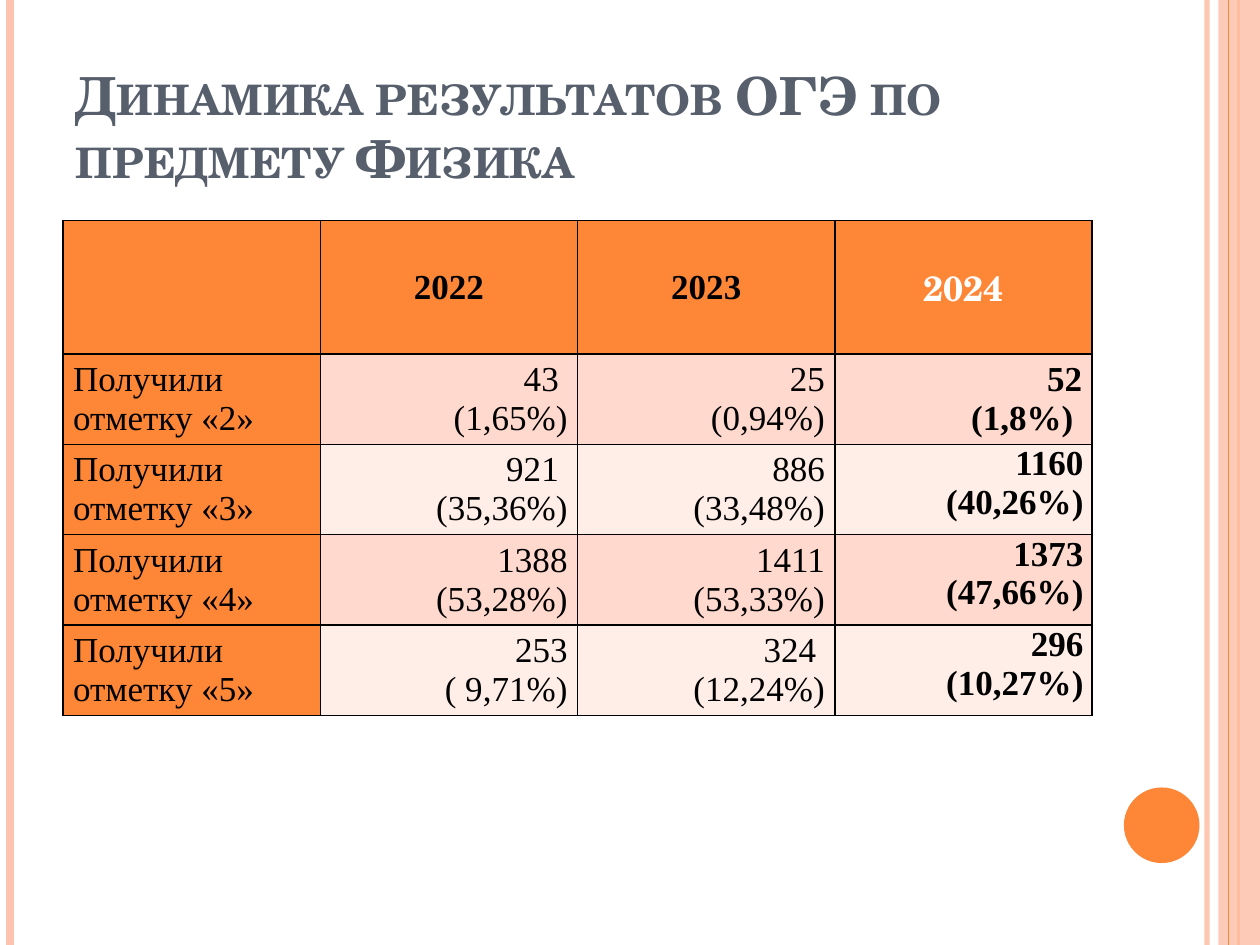
"""Build a slide with a table of yearly physics exam results."""
from dataclasses import dataclass

import lxml.etree
import pptx
import pptx.dml.color
import pptx.enum.shapes
import pptx.enum.text
import pptx.oxml.ns
import pptx.util

Inches = pptx.util.Inches
Align = pptx.enum.text.PP_ALIGN
Anchor = pptx.enum.text.MSO_ANCHOR
qn = pptx.oxml.ns.qn

ORANGE, PEACH, BLACK, WHITE = "FE8637", "FEC3AE", "000000", "FFFFFF"
BANDS = ("FFD9CE", "FFEDE8")
SERIF, SCHOOL = "Times New Roman", "TeX Gyre Schola"
HEADER = ("", "2022", "2023", "2024")
RESULTS = (
    ("Получили отметку «2»", "43 \n(1,65%)", "25\n (0,94%)", "52\n (1,8%) "),
    ("Получили отметку «3»", "921 \n(35,36%)", "886\n (33,48%)", "1160 (40,26%)"),
    ("Получили отметку «4»", "1388\n (53,28%)", "1411\n (53,33%)", "1373 (47,66%)"),
    ("Получили отметку «5»", "253\n ( 9,71%)", "324 \n(12,24%)", "296 (10,27%)"),
)


@dataclass
class Stripe:
    x: float
    color: str
    width: float
    opacity: int = 100


@dataclass
class CellStyle:
    fill: str
    align: Align = Align.LEFT
    anchor: Anchor = Anchor.TOP
    bold: bool = False
    font: str = SERIF
    color: str = BLACK
    compact: bool = False


STRIPES = (
    Stripe(9.58, PEACH, 3, 93),
    Stripe(0.08, PEACH, 4.5),
    Stripe(9.83, ORANGE, 1.5),
)
INNER_STRIPE = Stripe(9.75, ORANGE, 0.75)


def paint(fill, color: str, opacity: int = 100) -> None:
    fill.solid()
    fill.fore_color.rgb = pptx.dml.color.RGBColor.from_string(color)
    if opacity < 100:
        tone = fill._xPr.find(f"{qn('a:solidFill')}/{qn('a:srgbClr')}")
        lxml.etree.SubElement(tone, qn("a:alpha"), val=str(opacity * 1000))


def set_font(font, name: str, size: float, color: str, bold: bool) -> None:
    font.name, font.size, font.bold = name, pptx.util.Pt(size), bold
    paint(font.fill, color)


def draw_stripe(page, stripe: Stripe) -> None:
    x = Inches(stripe.x)
    line = page.shapes.add_connector(
        pptx.enum.shapes.MSO_CONNECTOR.STRAIGHT, x, 0, x, Inches(7.5))
    paint(line.line.fill, stripe.color, stripe.opacity)
    line.line.width = pptx.util.Pt(stripe.width)
    lxml.etree.SubElement(line._element.spPr, qn("a:effectLst"))


def draw_shape(page, kind, x: float, y: float, width: float, height: float,
               color: str, opacity: int = 100) -> None:
    shape = page.shapes.add_shape(
        kind, Inches(x), Inches(y), Inches(width), Inches(height))
    shape.shadow.inherit = False
    paint(shape.fill, color, opacity)
    shape.line.fill.background()


def draw_title(page, text: str) -> None:
    title = page.shapes.title
    title.left, title.top = Inches(0.5), Inches(0.3)
    title.width, title.height = Inches(8.17), Inches(1.25)
    frame = title.text_frame
    frame.text = text
    frame.word_wrap = True
    frame.auto_size = pptx.enum.text.MSO_AUTO_SIZE.NONE
    frame.vertical_anchor = Anchor.BOTTOM
    para = frame.paragraphs[0]
    para.alignment = Align.LEFT
    set_font(para.font, SCHOOL, 30, "575F6D", True)
    para.font._element.set("cap", "small")


def border_cell(cell) -> None:
    properties = cell._tc.get_or_add_tcPr()
    for index, side in enumerate(("a:lnL", "a:lnR", "a:lnT", "a:lnB")):
        edge = lxml.etree.Element(qn(side), w=str(pptx.util.Pt(1)))
        fill = lxml.etree.SubElement(edge, qn("a:solidFill"))
        lxml.etree.SubElement(fill, qn("a:srgbClr"), val=BLACK)
        properties.insert(index, edge)


def fill_cell(cell, text: str, style: CellStyle) -> None:
    paint(cell.fill, style.fill)
    border_cell(cell)
    cell.vertical_anchor = style.anchor
    cell.margin_left = cell.margin_right = Inches(0.07 if style.compact else 0.08)
    cell.margin_top = cell.margin_bottom = Inches(0 if style.compact else 0.05)
    cell.text = text
    for para in cell.text_frame.paragraphs:
        para.alignment = style.align
        set_font(para.font, style.font, 20, style.color, style.bold)
        if style.compact:
            para._p.get_or_add_pPr().set("indent", str(Inches(0.47)))


def style_for(row: int, column: int) -> CellStyle:
    last = column == len(HEADER) - 1
    if row == 0:
        return CellStyle(ORANGE, Align.CENTER, Anchor.MIDDLE, True,
                         SCHOOL if last else SERIF, WHITE if last else BLACK)
    if column == 0:
        return CellStyle(ORANGE)
    return CellStyle(BANDS[(row - 1) % 2], Align.RIGHT, bold=last,
                     compact=last and row > 1)


def draw_table(page) -> None:
    rows = (HEADER, *RESULTS)
    heights = [1.06] + [0.61] * len(RESULTS)
    table = page.shapes.add_table(
        len(rows), len(HEADER), Inches(0.5), Inches(1.75),
        Inches(8.17), Inches(sum(heights))).table
    for row, (texts, height) in enumerate(zip(rows, heights)):
        table.rows[row].height = Inches(height)
        for column, text in enumerate(texts):
            fill_cell(table.cell(row, column), text, style_for(row, column))


def main() -> None:
    deck = pptx.Presentation()
    deck.slide_width, deck.slide_height = Inches(10), Inches(7.5)
    page = deck.slides.add_slide(deck.slide_layouts.get_by_name("Title Only"))
    paint(page.background.fill, WHITE)
    kinds = pptx.enum.shapes.MSO_SHAPE
    for stripe in STRIPES:
        draw_stripe(page, stripe)
    draw_shape(page, kinds.RECTANGLE, 9.67, 0, 0.33, 7.5, PEACH, 87)
    draw_stripe(page, INNER_STRIPE)
    draw_shape(page, kinds.OVAL, 8.92, 6.25, 0.6, 0.6, ORANGE)
    draw_title(page, "Динамика результатов ОГЭ по предмету Физика")
    draw_table(page)
    deck.save("out.pptx")


if __name__ == "__main__":
    main()
